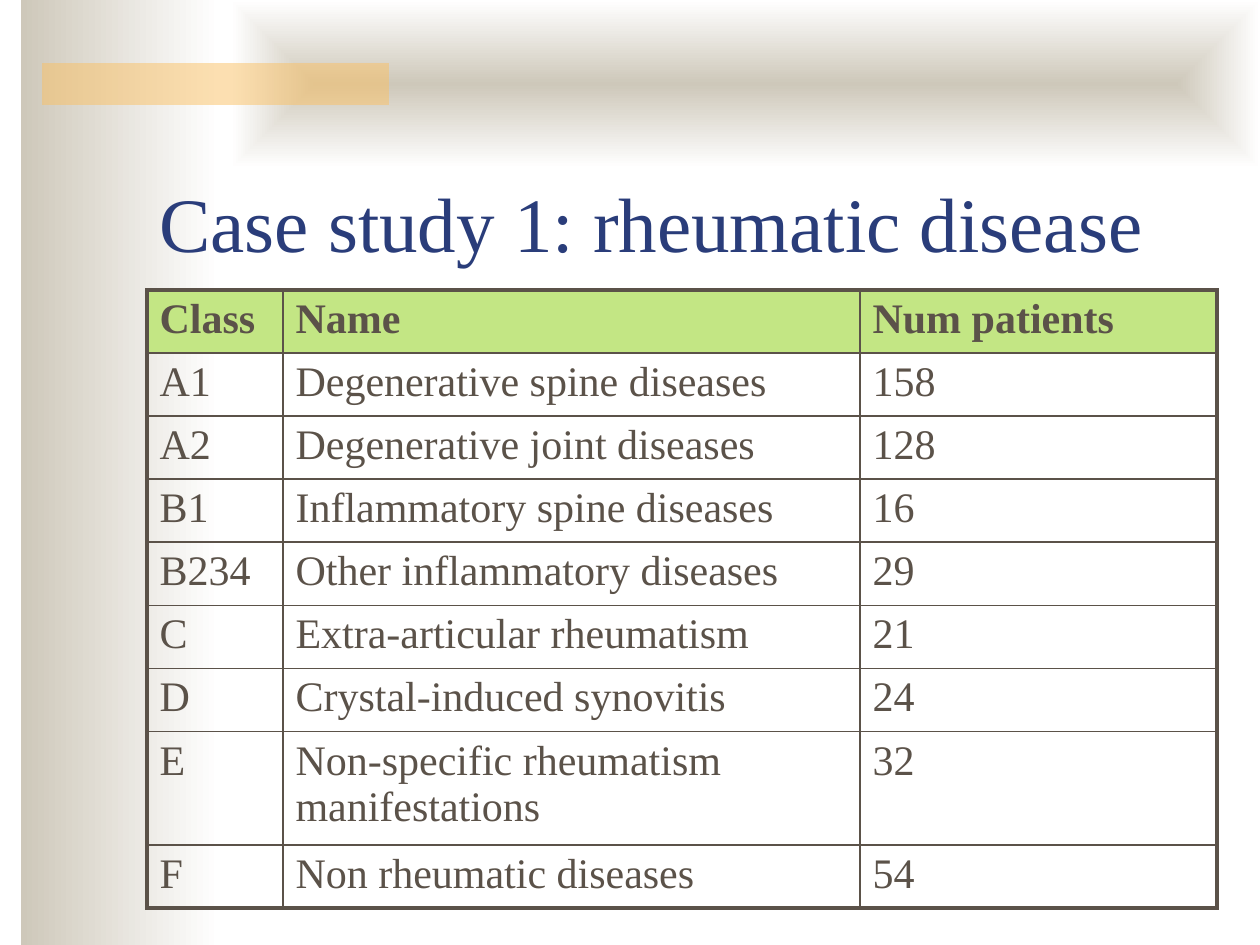
from lxml import etree
from pptx import Presentation, util as u
from pptx.dml.color import RGBColor
from pptx.enum import shapes, text
from pptx.oxml import parse_xml
from pptx.oxml.ns import nsdecls, qn

PX = 914400 / 126
FONT = "Times New Roman"
SAND, BROWN, NAVY, GREEN, AMBER = "CEC8BA", "5B5249", "2A3D7A", "C3E684", "FAC164"


def px(*lengths):
    return [u.Emu(round(length * PX)) for length in lengths]


def rgb(value):
    return RGBColor.from_string(value)


prs = Presentation()
prs.slide_width, prs.slide_height = px(1260, 945)
slide = prs.slides.add_slide(prs.slide_layouts[6])

# Background: side strip, top band, accent bar
side_strip, top_band, accent_bar = [
    slide.shapes.add_shape(shapes.MSO_SHAPE.RECTANGLE, *px(*place))
    for place in ((21, 0, 199, 945), (231, 0, 1029, 168), (42, 63, 347, 42))
]
for part in (side_strip, top_band, accent_bar):
    part.shadow.inherit = False
    part.line.fill.background()

for part in (side_strip, top_band):
    part.fill.gradient()
    part.fill.gradient_angle = 0
    for stop, color, position in zip(part.fill.gradient_stops, (SAND, "FFFFFF"), (0, 1)):
        stop.color.rgb = rgb(color)
        stop.position = position

# The top band fades from its centre to its edges
direction = top_band._element.spPr.find(qn("a:gradFill")).find(qn("a:lin"))
direction.getparent().replace(direction, parse_xml(
    f'<a:path {nsdecls("a")} path="shape">'
    '<a:fillToRect l="50000" t="50000" r="50000" b="50000"/></a:path>'))

accent_bar.fill.solid()
accent_bar.fill.fore_color.rgb = rgb(AMBER)
amber = accent_bar._element.spPr.find(qn("a:solidFill"))[0]
etree.SubElement(amber, qn("a:alpha")).set("val", "50000")

# Title
title = slide.shapes.add_textbox(*px(147, 116, 1071, 158)).text_frame
title.word_wrap = True
title.vertical_anchor = text.MSO_ANCHOR.BOTTOM
heading = title.paragraphs[0]
heading.text = "Case study 1: rheumatic disease"
heading.font.name, heading.font.size = FONT, u.Pt(44)
heading.font.color.rgb = rgb(NAVY)

# Table of disease classes
classes = [
    ("Class", "Name", "Num patients"),
    ("A1", "Degenerative spine diseases", "158"),
    ("A2", "Degenerative joint diseases", "128"),
    ("B1", "Inflammatory spine diseases", "16"),
    ("B234", "Other inflammatory diseases", "29"),
    ("C", "Extra-articular rheumatism", "21"),
    ("D", "Crystal-induced synovitis", "24"),
    ("E", "Non-specific rheumatism manifestations", "32"),
    ("F", "Non rheumatic diseases", "54"),
]
last_row, last_col = len(classes) - 1, len(classes[0]) - 1
table = slide.shapes.add_table(
    len(classes), len(classes[0]), *px(147, 290, 1070, 62 * len(classes))).table
table.horz_banding = False
for column, width in zip(table.columns, px(136, 577, 357)):
    column.width = width

for r, row in enumerate(classes):
    for c, value in enumerate(row):
        cell = table.cell(r, c)
        entry = cell.text_frame.paragraphs[0]
        entry.text = value
        entry.font.name, entry.font.size = FONT, u.Pt(24)
        entry.font.bold = r == 0
        entry.font.color.rgb = rgb(BROWN)

        # Outer borders are thicker; borders go before the fill in tcPr
        outer = {"L": c == 0, "R": c == last_col, "T": r == 0, "B": r == last_row}
        for side, is_outer in outer.items():
            weight = u.Pt(2.25 if is_outer else 1)
            cell._tc.get_or_add_tcPr().append(parse_xml(
                f'<a:ln{side} {nsdecls("a")} w="{weight}"><a:solidFill>'
                f'<a:srgbClr val="{BROWN}"/></a:solidFill></a:ln{side}>'))
        if r == 0:
            cell.fill.solid()
            cell.fill.fore_color.rgb = rgb(GREEN)
        else:
            cell.fill.background()

prs.save("out.pptx")
